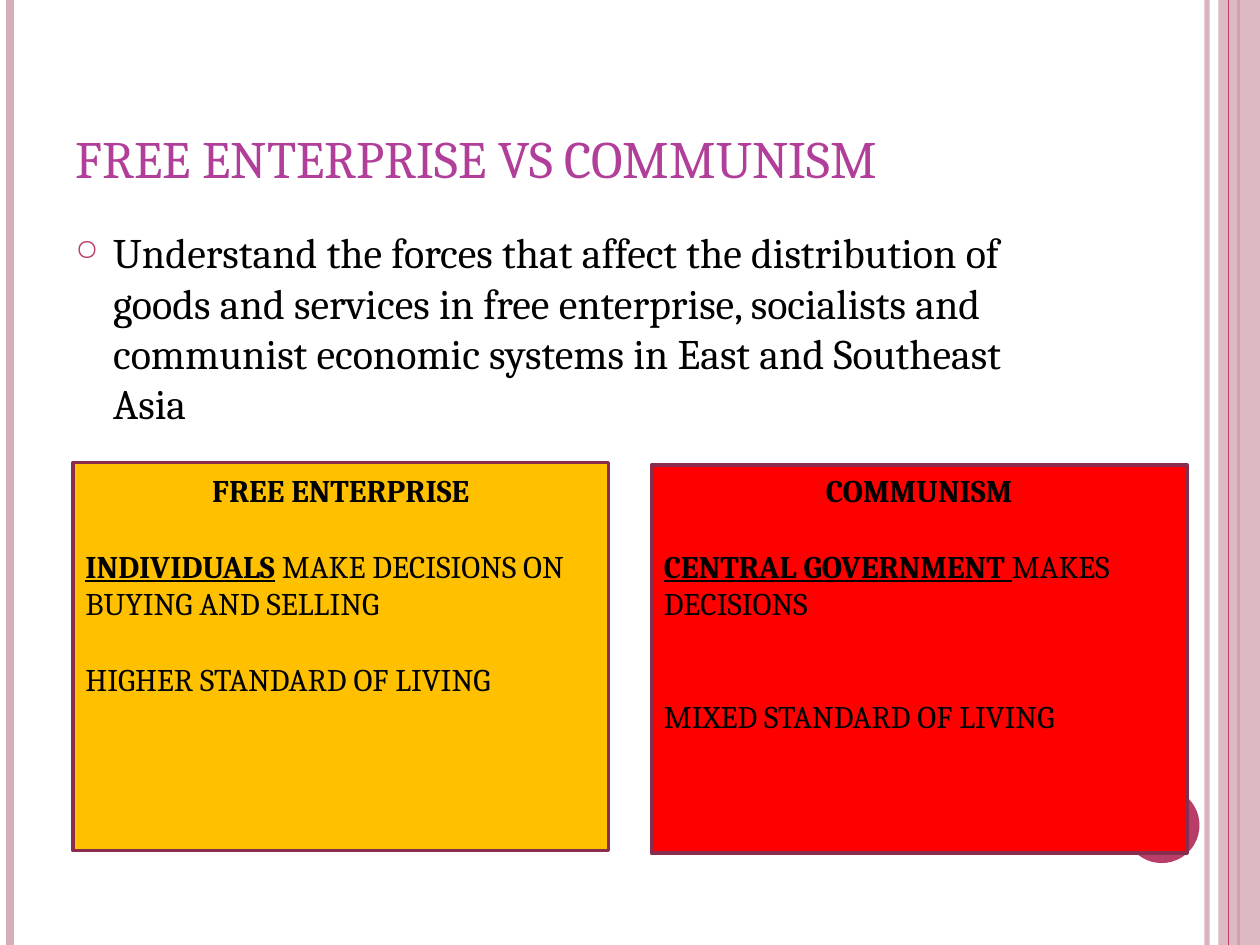
from lxml import etree
from pptx import Presentation
from pptx.dml.color import RGBColor
from pptx.enum import shapes, text
from pptx.oxml import ns
from pptx.util import Inches, Pt

FONT = "Cambria"
PINK, ROSE, WINE = "D8AFB9", "B83D68", "882D4D"
BLANK_LINE = 21.5  # height of one empty 18 pt line, in points


def color(hex_code):
    return RGBColor.from_string(hex_code)


def set_alpha(fill_parent, percent):
    node = fill_parent.find(".//" + ns.qn("a:srgbClr"))
    etree.SubElement(node, ns.qn("a:alpha")).set("val", str(percent * 1000))


def add_rule(page, x, hex_code, width, alpha=100):
    """Draw a full-height vertical line."""
    rule = page.shapes.add_connector(
        shapes.MSO_CONNECTOR.STRAIGHT, Inches(x), 0, Inches(x), Inches(7.5))
    rule.line.color.rgb = color(hex_code)
    rule.line.width = Pt(width)
    properties = rule._element.spPr
    if alpha < 100:
        set_alpha(properties, alpha)
    etree.SubElement(properties, ns.qn("a:effectLst"))


def add_block(page, kind, place, fill, outline=None, alpha=100):
    block = page.shapes.add_shape(kind, *map(Inches, place))
    block.shadow.inherit = False
    block.fill.solid()
    block.fill.fore_color.rgb = color(fill)
    if alpha < 100:
        set_alpha(block._element.spPr, alpha)
    if outline:
        block.line.color.rgb = color(outline)
        block.line.width = Pt(2)
    else:
        block.line.fill.background()


def add_text_box(page, place, anchor=text.MSO_ANCHOR.TOP):
    box = page.shapes.add_textbox(*map(Inches, place))
    box.text_frame.word_wrap = True
    box.text_frame.vertical_anchor = anchor
    return box.text_frame


def add_span(para, words, size, hex_code="000000", bold=False, underline=False):
    span = para.add_run()
    span.text = words
    span.font.name = FONT
    span.font.size = Pt(size)
    span.font.color.rgb = color(hex_code)
    span.font.bold = bold
    span.font.underline = underline


def add_bullet(para, symbol, hex_code, percent, indent):
    properties = para._p.get_or_add_pPr()
    properties.set("marL", str(Inches(indent)))
    properties.set("indent", str(-Inches(indent)))
    tint = etree.SubElement(properties, ns.qn("a:buClr"))
    etree.SubElement(tint, ns.qn("a:srgbClr")).set("val", hex_code)
    etree.SubElement(properties, ns.qn("a:buSzPct")).set("val", str(percent * 1000))
    etree.SubElement(properties, ns.qn("a:buChar")).set("char", symbol)


def add_system(page, left, top, fill, heading, key, decision, living, gap):
    """Draw one economic system: coloured panel, heading and two statements."""
    add_block(page, shapes.MSO_SHAPE.RECTANGLE, (left, top, 4.25, 3.08), fill, WINE)
    frame = add_text_box(page, (left, 3.69, 4.25, 3.13))

    title = frame.paragraphs[0]
    title.alignment = text.PP_ALIGN.CENTER
    add_span(title, heading, 18, bold=True)

    choice = frame.add_paragraph()
    choice.space_before = Pt(BLANK_LINE)
    add_span(choice, key, 18, bold=True, underline=True)
    add_span(choice, decision, 18)

    standard = frame.add_paragraph()
    standard.space_before = Pt(BLANK_LINE * gap)
    add_span(standard, living, 18)


def add_decoration(page):
    add_rule(page, 9.58, PINK, 3, alpha=93)
    add_rule(page, 0.08, PINK, 4.5)
    add_block(page, shapes.MSO_SHAPE.RECTANGLE, (9.67, 0, 0.33, 7.5), PINK, alpha=87)
    add_rule(page, 9.83, "D0A0AC", 1.5)
    add_rule(page, 9.75, ROSE, 0.75)
    add_block(page, shapes.MSO_SHAPE.OVAL, (8.92, 6.25, 0.6, 0.6), ROSE)


def main():
    deck = Presentation()
    deck.slide_width, deck.slide_height = Inches(10), Inches(7.5)
    page = deck.slides.add_slide(deck.slide_layouts[6])
    add_decoration(page)

    # Title
    title = add_text_box(page, (0.5, 0.3, 8.17, 1.25), text.MSO_ANCHOR.BOTTOM)
    add_span(title.paragraphs[0], "FREE ENTERPRISE VS COMMUNISM", 30, "B13F9A")

    # Learning goal
    goal = add_text_box(page, (0.5, 1.75, 8.17, 5.33)).paragraphs[0]
    goal.space_before = Pt(6)
    add_bullet(goal, "○", ROSE, 70, 0.3)
    add_span(goal, "Understand the forces that affect the distribution of goods and "
             "services in free enterprise, socialists and communist economic "
             "systems in East and Southeast Asia", 24)

    # Comparison
    add_system(page, 0.58, 3.67, "FFC000", "FREE ENTERPRISE", "INDIVIDUALS",
               " MAKE DECISIONS ON BUYING AND SELLING",
               "HIGHER STANDARD OF LIVING", gap=1)
    add_system(page, 5.17, 3.69, "FF0000", "COMMUNISM", "CENTRAL GOVERNMENT ",
               "MAKES DECISIONS", "MIXED STANDARD OF LIVING", gap=2)

    deck.save("out.pptx")


if __name__ == "__main__":
    main()
